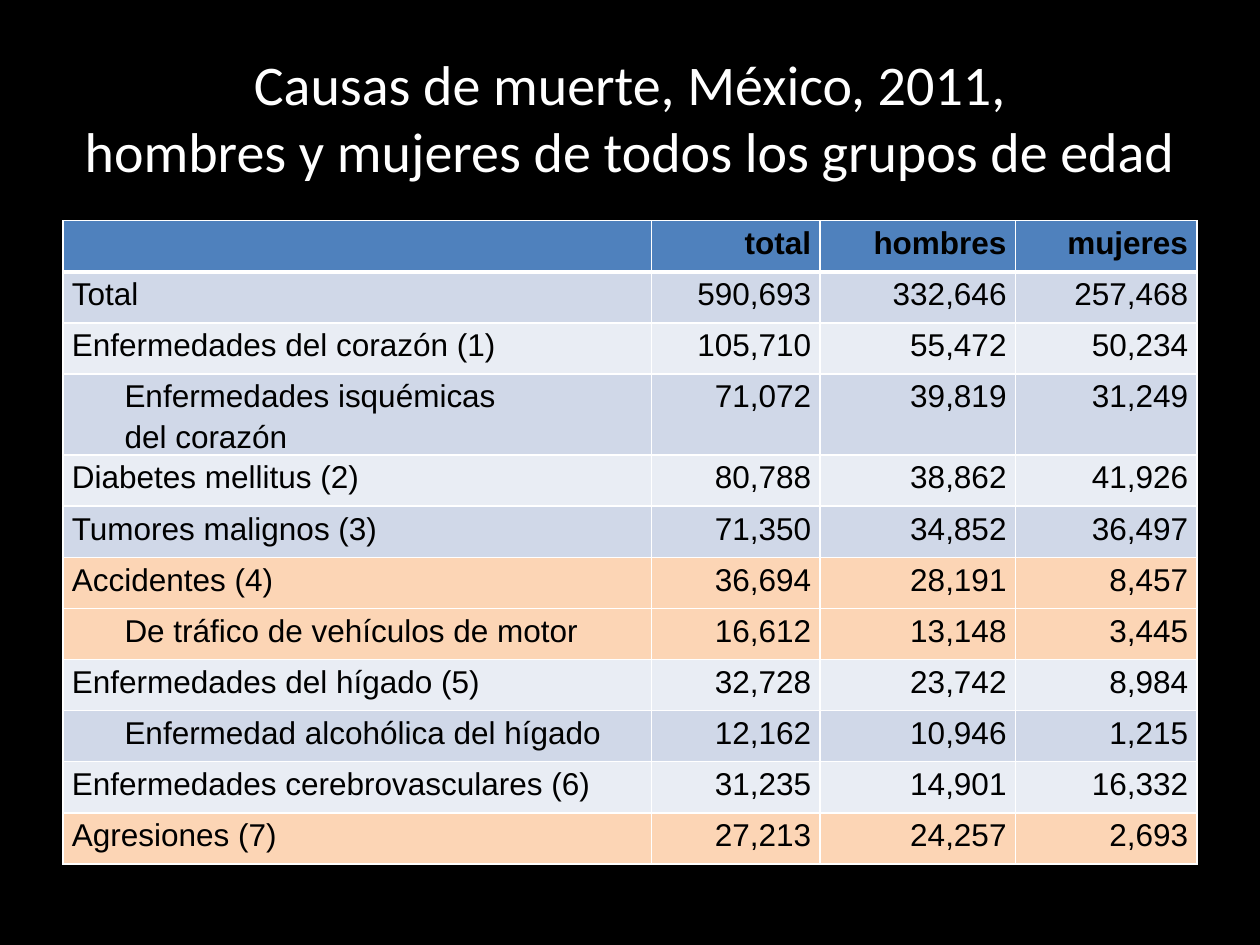
from pptx import Presentation
from pptx import util as u
from pptx.dml.color import RGBColor
from pptx.enum import text
from pptx.oxml import xmlchemy as x

HUES = {
    "back": "000000", "title": "FFFFFF", "text": "000000", "rule": "FFFFFF",
    "head": "4F81BD", "odd": "D0D8E8", "even": "E9EDF4", "mark": "FCD5B5",
}
TITLE = ["Causas de muerte, México, 2011,",
         "hombres y mujeres de todos los grupos de edad"]
HEAD = ["", "total", "hombres", "mujeres"]
# Label, indent level, highlighted, figures
CAUSES = [
    ("Total", 0, False, "590,693 332,646 257,468"),
    ("Enfermedades del corazón (1)", 0, False, "105,710 55,472 50,234"),
    ("Enfermedades isquémicas\ndel corazón", 1, False, "71,072 39,819 31,249"),
    ("Diabetes mellitus (2)", 0, False, "80,788 38,862 41,926"),
    ("Tumores malignos (3)", 0, False, "71,350 34,852 36,497"),
    ("Accidentes (4)", 0, True, "36,694 28,191 8,457"),
    ("De tráfico de vehículos de motor", 1, True, "16,612 13,148 3,445"),
    ("Enfermedades del hígado (5)", 0, False, "32,728 23,742 8,984"),
    ("Enfermedad alcohólica del hígado", 1, False, "12,162 10,946 1,215"),
    ("Enfermedades cerebrovasculares (6)", 0, False, "31,235 14,901 16,332"),
    ("Agresiones (7)", 0, True, "27,213 24,257 2,693"),
]
COLS = [11.86, 3.4, 3.94, 3.66]
ROW = 1.03
STEP = 1.06
LEFT, RIGHT = text.PP_ALIGN.LEFT, text.PP_ALIGN.RIGHT


def tint(name):
    return RGBColor.from_string(HUES[name])


def write(para, lines, font, size, hue, bold=False):
    for i, line in enumerate(lines):
        if i:
            para.add_line_break()
        run = para.add_run()
        run.text = line
        run.font.name, run.font.size, run.font.bold = font, u.Pt(size), bold
        run.font.color.rgb = tint(hue)


def edge(cell, side, width):
    line = x.OxmlElement(f"a:ln{side}")
    line.set("w", str(u.Pt(width)))
    fill = x.OxmlElement("a:solidFill")
    hue = x.OxmlElement("a:srgbClr")
    hue.set("val", HUES["rule"])
    fill.append(hue)
    line.append(fill)
    cell._tc.get_or_add_tcPr().append(line)


def fill_cell(cell, label, row, fill, align, level=0):
    # The rule under the header is heavier than the others
    for side in "LRTB":
        heavy = (row, side) in [(0, "B"), (1, "T")]
        edge(cell, side, 3 if heavy else 1)
    cell.fill.solid()
    cell.fill.fore_color.rgb = tint(fill)
    cell.margin_left = cell.margin_right = u.Cm(0.18)
    cell.margin_top = cell.margin_bottom = 0
    para = cell.text_frame.paragraphs[0]
    para.alignment, para.line_spacing = align, 1.15
    if level:
        props = para._p.get_or_add_pPr()
        props.set("marL", str(u.Cm(level * STEP)))
        props.set("indent", "0")
    if label:
        write(para, label.split("\n"), "Arial", 18, "text", row == 0)


def add_title(slide, left, top, width, height):
    title = slide.shapes.title
    title.left, title.top = u.Cm(left), u.Cm(top)
    title.width, title.height = u.Cm(width), u.Cm(height)
    frame = title.text_frame
    frame.word_wrap = True
    frame.auto_size = text.MSO_AUTO_SIZE.NONE
    frame.vertical_anchor = text.MSO_ANCHOR.MIDDLE
    para = frame.paragraphs[0]
    para.alignment = text.PP_ALIGN.CENTER
    write(para, TITLE, "Calibri", 32, "title")


def add_causes(slide, left, top):
    count = len(CAUSES) + 1
    table = slide.shapes.add_table(
        count, len(COLS), u.Cm(left), u.Cm(top),
        u.Cm(sum(COLS)), u.Cm(count * ROW)).table
    for col, width in zip(table.columns, COLS):
        col.width = u.Cm(width)
    for row in table.rows:
        row.height = u.Cm(ROW)

    # Header
    for c, label in enumerate(HEAD):
        fill_cell(table.cell(0, c), label, 0, "head", RIGHT)

    # Causes, banded unless highlighted
    for r, (label, level, mark, nums) in enumerate(CAUSES, 1):
        fill = "mark" if mark else "odd" if r % 2 else "even"
        fill_cell(table.cell(r, 0), label, r, fill, LEFT, level)
        for c, num in enumerate(nums.split(), 1):
            fill_cell(table.cell(r, c), num, r, fill, RIGHT)


def main():
    deck = Presentation()
    deck.slide_width, deck.slide_height = u.Cm(25.4), u.Cm(19.05)
    slide = deck.slides.add_slide(deck.slide_layouts[5])
    slide.background.fill.solid()
    slide.background.fill.fore_color.rgb = tint("back")
    add_title(slide, 1.27, 0.76, 22.86, 3.18)
    add_causes(slide, 1.27, 4.45)
    deck.save("out.pptx")


if __name__ == "__main__":
    main()
